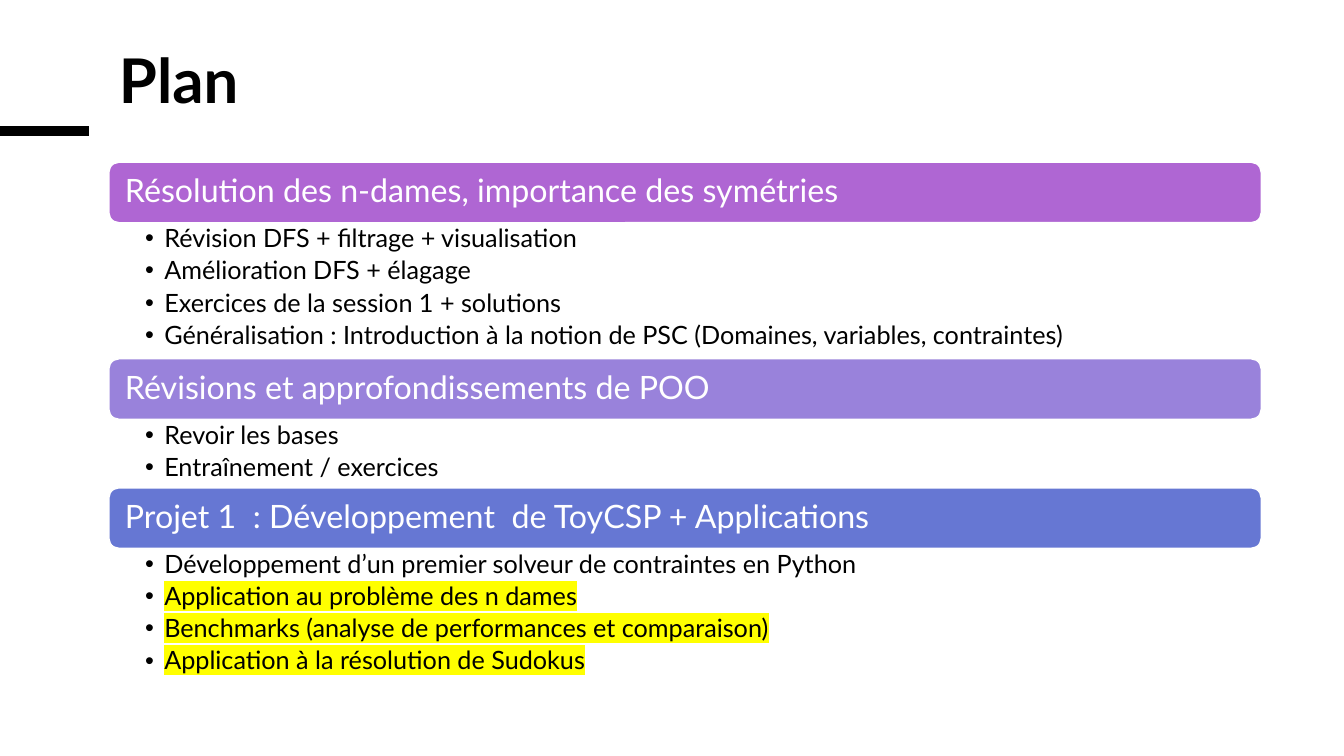
from lxml import etree
from pptx import Presentation
from pptx.dml.color import RGBColor
from pptx.enum.shapes import MSO_CONNECTOR, MSO_SHAPE
from pptx.enum.text import MSO_ANCHOR, MSO_AUTO_SIZE, PP_ALIGN
from pptx.oxml.ns import qn
from pptx.util import Pt

PX = 9144  # 100 px to the inch
FONT = "Lato"
TOP, MIDDLE = MSO_ANCHOR.TOP, MSO_ANCHOR.MIDDLE
LEFT = PP_ALIGN.LEFT
NO_FIT = MSO_AUTO_SIZE.NONE
ROUND = MSO_SHAPE.ROUNDED_RECTANGLE
STRAIGHT = MSO_CONNECTOR.STRAIGHT
COLORS = {
    "ink": "000000", "paper": "FFFFFF", "mark": "FFFF00",
    "purple": "AF66D3", "violet": "9982DB", "blue": "6677D3",
}
BAR = 60  # height of a section bar

# Section: colour, heading, height of its list, points as (text, marked)
PARTS = [
    ("purple", "Résolution des n-dames, importance des symétries", 135, [
        ("Révision DFS + filtrage + visualisation", False),
        ("Amélioration DFS + élagage", False),
        ("Exercices de la session 1 + solutions", False),
        ("Généralisation : Introduction à la notion de PSC "
         "(Domaines, variables, contraintes)", False),
    ]),
    ("violet", "Révisions et approfondissements de POO", 68, [
        ("Revoir les bases", False),
        ("Entraînement / exercices", False),
    ]),
    ("blue", "Projet 1  : Développement  de ToyCSP + Applications", 135, [
        ("Développement d’un premier solveur de contraintes en Python", False),
        ("Application au problème des n dames", True),
        ("Benchmarks (analyse de performances et comparaison)", True),
        ("Application à la résolution de Sudokus", True),
    ]),
]


def px(*sizes):
    return [size * PX for size in sizes]


def color(name):
    return RGBColor.from_string(COLORS[name])


def set_frame(frame, anchor, insets):
    frame.word_wrap = True
    frame.auto_size = NO_FIT
    frame.vertical_anchor = anchor
    (frame.margin_left, frame.margin_top,
     frame.margin_right, frame.margin_bottom) = px(*insets)


def add_run(para, text, size, ink, bold=False, marked=False):
    run = para.add_run()
    run.text = text
    font = run.font
    font.size, font.bold, font.name = Pt(size), bold, FONT
    font.color.rgb = color(ink)
    if marked:
        light = etree.Element(qn("a:highlight"))
        etree.SubElement(light, qn("a:srgbClr"), val=COLORS["mark"])
        props = run._r.get_or_add_rPr()
        props.find(qn("a:solidFill")).addnext(light)


def add_bullet(para, indent):
    props = para._p.get_or_add_pPr()
    props.set("marL", str(indent * PX))
    props.set("indent", str(-indent * PX))
    etree.SubElement(props, qn("a:buFont"), typeface="Arial")
    etree.SubElement(props, qn("a:buChar"), char="•")


def add_title(slide, x, y, w, h):
    title = slide.shapes.title
    title.left, title.top, title.width, title.height = px(x, y, w, h)
    set_frame(title.text_frame, TOP, (10, 5, 10, 5))
    para = title.text_frame.paragraphs[0]
    para.alignment, para.line_spacing = LEFT, 0.85
    add_run(para, "Plan", 44, "ink", bold=True)

    # Rule from the slide edge to the title
    rule = slide.shapes.add_connector(STRAIGHT, *px(0, y + 82, x - 20, y + 82))
    rule.line.color.rgb = color("ink")
    rule.line.width = Pt(6.75)
    etree.SubElement(rule._element.spPr, qn("a:effectLst"))


def add_bar(slide, x, y, w, h, fill, text):
    bar = slide.shapes.add_shape(ROUND, *px(x, y, w, h))
    bar.shadow.inherit = False
    bar.fill.solid()
    bar.fill.fore_color.rgb = color(fill)
    bar.line.color.rgb = color("paper")
    bar.line.width = Pt(1)
    set_frame(bar.text_frame, MIDDLE, (13, 10, 13, 10))
    para = bar.text_frame.paragraphs[0]
    para.alignment, para.line_spacing = LEFT, 0.9
    add_run(para, text, 23, "paper")


def add_list(slide, x, y, w, h, points):
    frame = slide.shapes.add_textbox(*px(x, y, w, h)).text_frame
    set_frame(frame, TOP, (36, 3, 18, 3))
    for i, (text, marked) in enumerate(points):
        para = frame.add_paragraph() if i else frame.paragraphs[0]
        para.level, para.alignment = 1, LEFT
        para.line_spacing, para.space_after = 0.9, Pt(3.6)
        add_bullet(para, 19)
        add_run(para, text, 18, "ink", marked=marked)


def add_plan(slide, x, y, w):
    for fill, head, h, points in PARTS:
        add_bar(slide, x, y, w, BAR, fill, head)
        add_list(slide, x, y + BAR, w, h, points)
        y += BAR + h


def main():
    deck = Presentation()
    deck.slide_width, deck.slide_height = px(1333, 750)
    slide = deck.slides.add_slide(deck.slide_layouts[5])
    add_title(slide, 108, 48, 1085, 89)
    add_plan(slide, 108, 161, 1143)
    deck.save("out.pptx")


if __name__ == "__main__":
    main()
